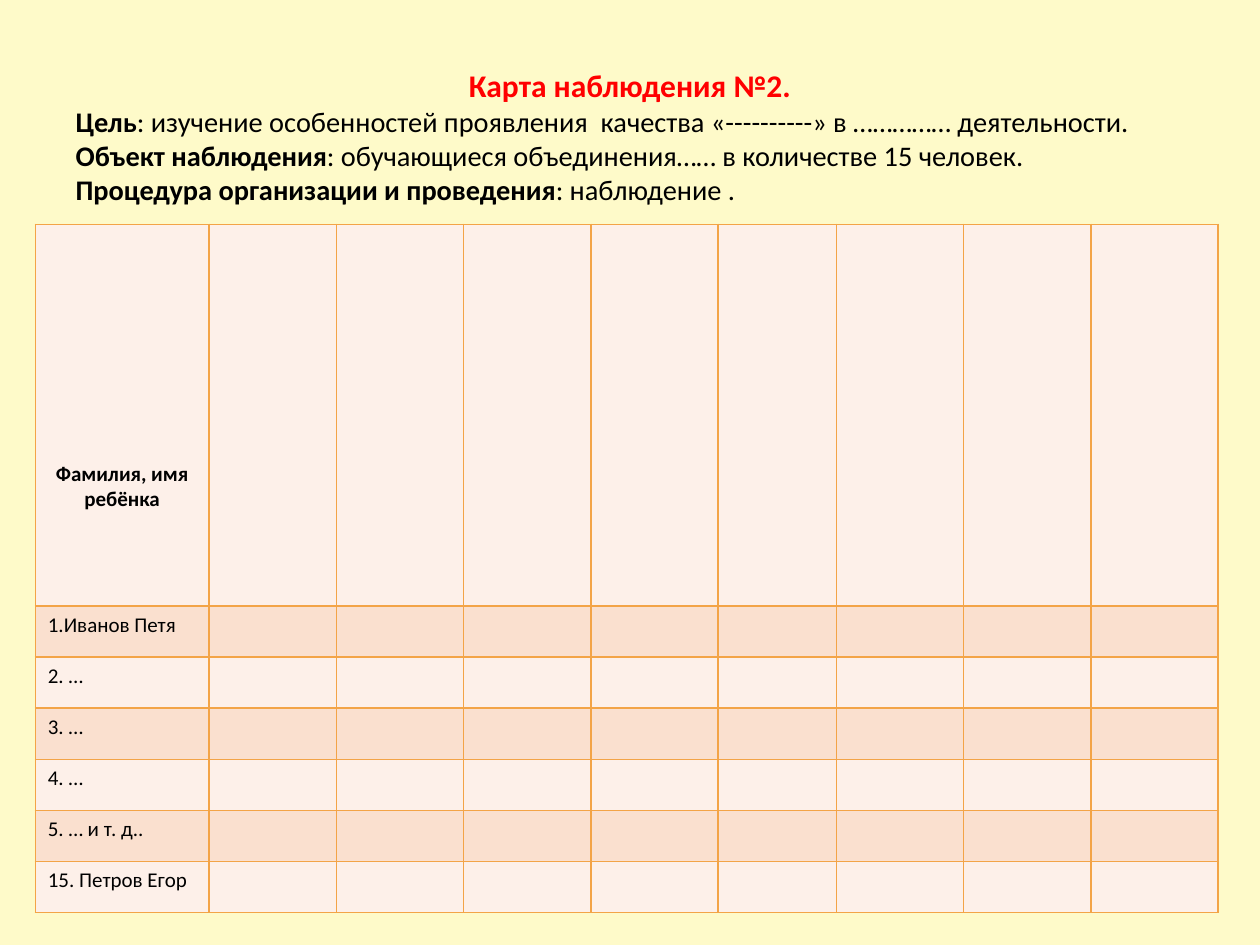
import pptx
import pptx.dml.color
import pptx.enum.text
import pptx.oxml
import pptx.oxml.ns
import pptx.util
from pptx.util import Inches, Pt

COLORS = {"background": "FEFAC9", "heading": "FF0000", "text": "000000",
          "border": "F3A447", "light": "FDF0E9", "dark": "FAE0CF"}
FONT = "Calibri"
ALIGN = pptx.enum.text.PP_ALIGN

HEADING = "Карта наблюдения №2."
DETAILS = [
    ("Цель", ": изучение особенностей проявления  качества «----------» в …………… деятельности."),
    ("Объект наблюдения", ": обучающиеся объединения…… в количестве 15 человек."),
    ("Процедура организации и проведения", ": наблюдение ."),
]
NAMES = ["Фамилия, имя ребёнка", "1.Иванов Петя", "2. …", "3. …", "4. …",
         "5. … и т. д..", "15. Петров Егор"]
COLUMN_WIDTHS = [1.38] + [1.01] * 4 + [0.94] + [1.01] * 3
ROW_HEIGHTS = [3.03] + [0.4] * 6


def rgb(name):
    return pptx.dml.color.RGBColor.from_string(COLORS[name])


def add_run(p, text, size, bold=False, color="text"):
    r = p.add_run()
    r.text = text
    r.font.name, r.font.size, r.font.bold = FONT, Pt(size), bold
    r.font.color.rgb = rgb(color)


def add_title(s):
    title = s.shapes.title
    title.left, title.top = Inches(0.5), Inches(0.3)
    title.width, title.height = Inches(9), Inches(1.56)
    tf = title.text_frame
    tf.word_wrap = True
    tf.auto_size = pptx.enum.text.MSO_AUTO_SIZE.NONE
    tf.vertical_anchor = pptx.enum.text.MSO_ANCHOR.MIDDLE
    p = tf.paragraphs[0]
    p.alignment = ALIGN.CENTER
    add_run(p, HEADING, 18, True, "heading")
    for label, detail in DETAILS:
        p = tf.add_paragraph()
        p.alignment = ALIGN.LEFT
        add_run(p, label, 16.2, True)
        add_run(p, detail, 16.2)


def set_borders(cell):
    """Draw a 1 pt line on all four sides; lines must precede the fill."""
    tcPr = cell._tc.get_or_add_tcPr()
    for i, side in enumerate(("lnL", "lnR", "lnT", "lnB")):
        tcPr.insert(i, pptx.oxml.parse_xml(
            f'<a:{side} {pptx.oxml.ns.nsdecls("a")} w="{Pt(1)}"><a:solidFill>'
            f'<a:srgbClr val="{COLORS["border"]}"/></a:solidFill></a:{side}>'))


def add_observation_table(s):
    table = s.shapes.add_table(
        len(ROW_HEIGHTS), len(COLUMN_WIDTHS), Inches(0.28), Inches(1.78),
        Inches(sum(COLUMN_WIDTHS)), Inches(sum(ROW_HEIGHTS))).table
    for column, width in zip(table.columns, COLUMN_WIDTHS):
        column.width = Inches(width)
    for i, (row, height, name) in enumerate(zip(table.rows, ROW_HEIGHTS, NAMES)):
        row.height = Inches(height)
        for cell in row.cells:
            cell.fill.solid()
            cell.fill.fore_color.rgb = rgb("dark" if i % 2 else "light")
            set_borders(cell)
        add_run(row.cells[0].text_frame.paragraphs[0], name, 12, bold=i == 0)
    header = table.cell(0, 0)
    header.margin_top = Inches(1.88)
    header.text_frame.paragraphs[0].alignment = ALIGN.CENTER


def main():
    prs = pptx.Presentation()
    prs.slide_width, prs.slide_height = Inches(10), Inches(7.5)
    s = prs.slides.add_slide(prs.slide_layouts.get_by_name("Title Only"))
    s.background.fill.solid()
    s.background.fill.fore_color.rgb = rgb("background")
    add_title(s)
    add_observation_table(s)
    prs.save("out.pptx")


if __name__ == "__main__":
    main()
